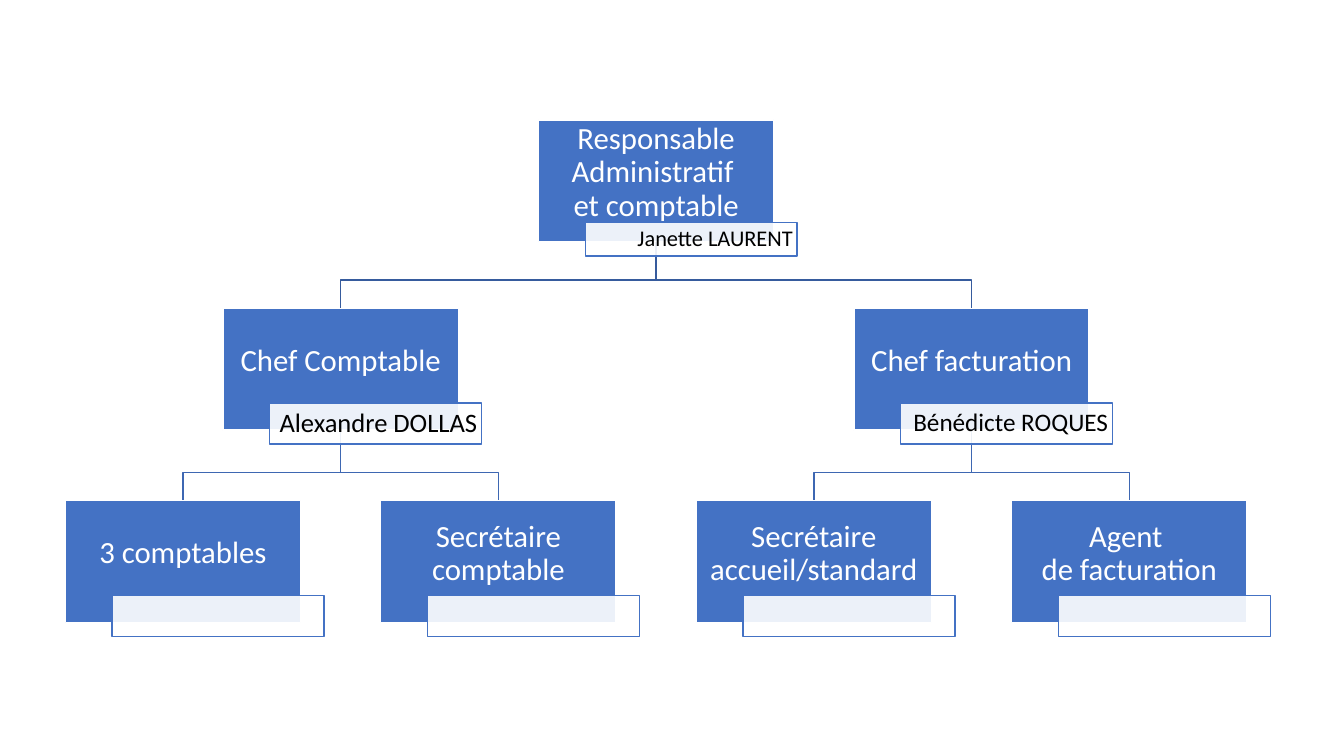
"""Build an organisation chart of an accounting department."""
from lxml.etree import SubElement
from pptx import Presentation
from pptx.dml.color import RGBColor
from pptx.enum.shapes import MSO_SHAPE
from pptx.enum.text import MSO_ANCHOR, PP_ALIGN
from pptx.oxml.ns import qn
from pptx.util import Cm, Pt

BLUE = RGBColor(0x44, 0x72, 0xC4)
WHITE = RGBColor(255, 255, 255)
BLACK = RGBColor(0, 0, 0)
LINKS = {1: RGBColor(0x36, 0x5B, 0x9D), 2: RGBColor(0x3E, 0x67, 0xB2)}

# role, level, column, name, name size
POSTS = [
    ("Responsable Administratif \vet comptable", 0, 1.5, "Janette LAURENT", 16),
    ("Chef Comptable", 1, 0.5, "Alexandre DOLLAS", 19),
    ("3 comptables", 2, 0, "", 18),
    ("Secrétaire comptable", 2, 1, "", 18),
    ("Chef facturation", 1, 2.5, "Bénédicte ROQUES", 18),
    ("Secrétaire accueil/standard", 2, 2, "", 18),
    ("Agent \vde facturation", 2, 3, "", 18),
]
# parent column, child column, child level
TIES = [(2.5, 3, 2), (2.5, 2, 2), (1.5, 2.5, 1),
        (0.5, 1, 2), (0.5, 0, 2), (1.5, 0.5, 1)]

TOPS = [3.02, 7.77, 12.62]
TAGS = [(2.59, 0.84), (2.39, 1.03), (2.39, 1.03)]
FIRST, PITCH = 4.61, 7.95
WIDE, HIGH = 5.93, 3.07
SHIFT, TAG_WIDE = 1.18, 5.34
DROP = 0.71


def center(col):
    return FIRST + PITCH * col


def add_tie(slide, start, end, level):
    top = TOPS[level - 1] + HIGH
    low = TOPS[level]
    bend = low - DROP
    x, goal = center(start), center(end)
    build = slide.shapes.build_freeform(Cm(x), Cm(top))
    spots = [(x, bend), (goal, bend), (goal, low)]
    build.add_line_segments([(Cm(a), Cm(b)) for a, b in spots], close=False)
    tie = build.convert_to_shape()
    tie.shadow.inherit = False
    tie.fill.background()
    tie.line.color.rgb = LINKS[level]
    tie.line.width = Pt(1)


def add_box(slide, area, fill, edge, text, size, ink, align, pads):
    box = slide.shapes.add_shape(MSO_SHAPE.RECTANGLE, *map(Cm, area))
    box.shadow.inherit = False
    box.fill.solid()
    box.fill.fore_color.rgb = fill
    box.line.color.rgb = edge
    box.line.width = Pt(1)
    frame = box.text_frame
    frame.word_wrap = True
    frame.vertical_anchor = MSO_ANCHOR.MIDDLE
    frame.margin_left = frame.margin_right = Cm(pads[0])
    frame.margin_top, frame.margin_bottom = Cm(pads[1]), Cm(pads[2])
    para = frame.paragraphs[0]
    para.text = text
    para.alignment = align
    para.line_spacing = 0.9
    para.font.size = Pt(size)
    para.font.name = "Calibri"
    para.font.color.rgb = ink
    return box


def add_post(slide, role, level, col, name, size):
    left, top = center(col) - WIDE / 2, TOPS[level]
    add_box(slide, (left, top, WIDE, HIGH), BLUE, WHITE,
            role, 22, WHITE, PP_ALIGN.CENTER, (0.04, 0.04, 0.43))
    down, tall = TAGS[level]
    tag = add_box(slide, (left + SHIFT, top + down, TAG_WIDE, tall), WHITE, BLUE,
                  name, size, BLACK, PP_ALIGN.RIGHT, (0.11, 0.03, 0.03))
    tint = tag.fill._xPr.find(qn("a:solidFill"))[0]
    SubElement(tint, qn("a:alpha"), val="90000")


def main():
    deck = Presentation()
    deck.slide_width, deck.slide_height = Cm(33.87), Cm(19.05)
    slide = deck.slides.add_slide(deck.slide_layouts[6])
    for tie in TIES:
        add_tie(slide, *tie)
    for post in POSTS:
        add_post(slide, *post)
    deck.save("out.pptx")


if __name__ == "__main__":
    main()
